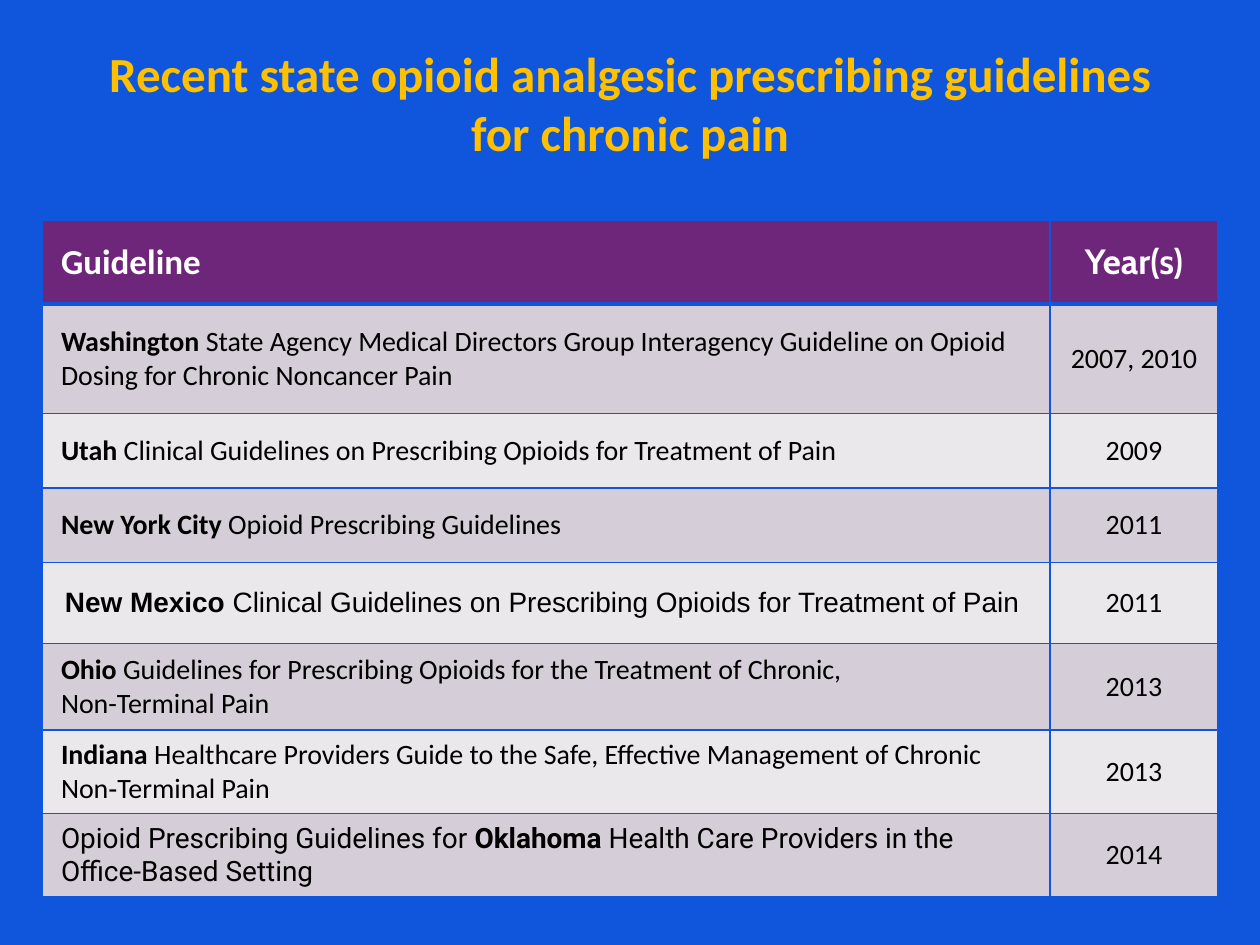
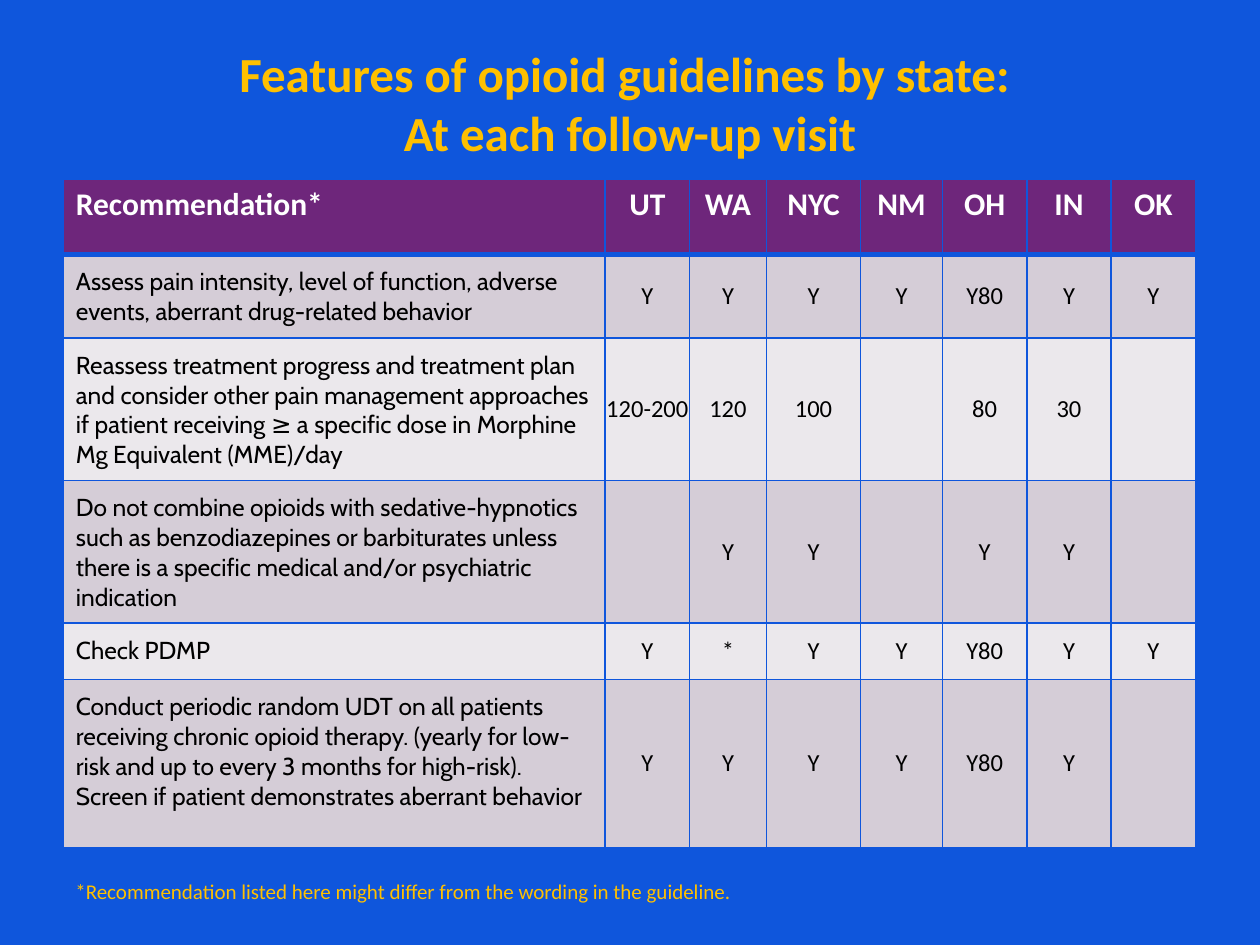
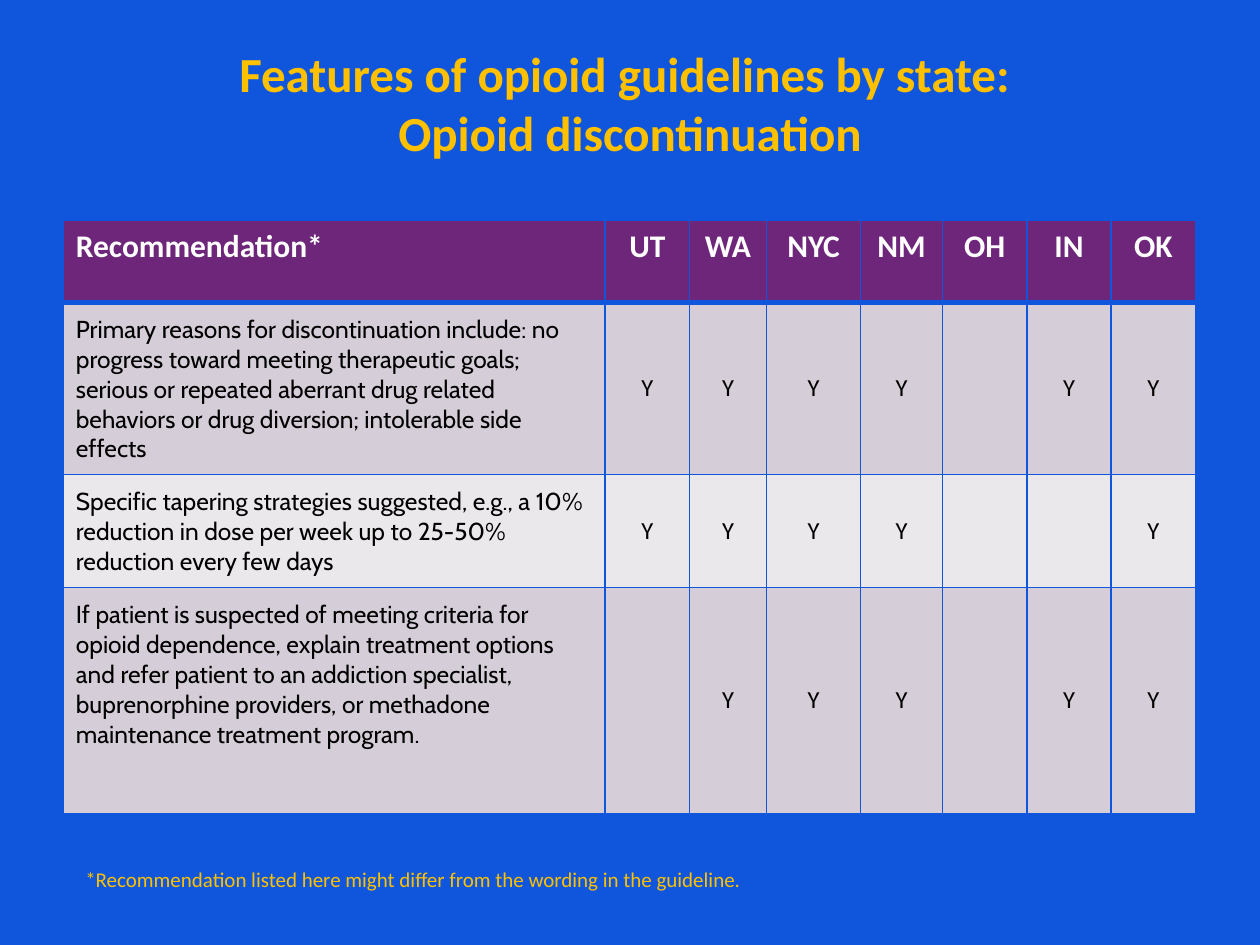
from lxml import etree
from pptx import Presentation
from pptx.dml.color import RGBColor
from pptx.enum.text import MSO_ANCHOR, PP_ALIGN
from pptx.oxml.ns import qn
from pptx.util import Cm, Pt

TOP, MIDDLE = MSO_ANCHOR.TOP, MSO_ANCHOR.MIDDLE
LEFT, CENTER = PP_ALIGN.LEFT, PP_ALIGN.CENTER

HUES = {
    "back": "0F56DC", "title": "FFC000", "head": "6E267B", "white": "FFFFFF",
    "odd": "D5CDD7", "even": "EBE8EC", "text": "000000",
}

# Content: text between bars is bold
GUIDES = [
    ("|Washington| State Agency Medical Directors Group Interagency Guideline on "
     "Opioid Dosing for Chronic Noncancer Pain", "2007, 2010"),
    ("|Utah| Clinical Guidelines on Prescribing Opioids for Treatment of Pain", "2009"),
    ("|New York City| Opioid Prescribing Guidelines", "2011"),
    ("|New Mexico| Clinical Guidelines on Prescribing Opioids for Treatment of Pain",
     "2011"),
    ("|Ohio| Guidelines for Prescribing Opioids for the Treatment of Chronic,\n"
     "Non-Terminal Pain", "2013"),
    ("|Indiana| Healthcare Providers Guide to the Safe, Effective Management of "
     "Chronic Non‐Terminal Pain", "2013"),
    ("Opioid Prescribing Guidelines for |Oklahoma| Health Care Providers in the "
     "Office-Based Setting", "2014"),
]
GUIDE_FONTS = {4: "Arial", 7: "Roboto"}
GUIDE_COLS = [20.32, 3.38]
GUIDE_ROWS = [1.68, 2.21, 1.5, 1.5, 1.63, 1.75, 1.68, 1.68]

STATES = ("Recommendation*", "UT", "WA", "NYC", "NM", "OH", "IN", "OK")
STATE_COLS = [10.92, 1.7, 1.55, 1.9, 1.65, 1.7, 1.7, 1.7]
NOTE = "*Recommendation listed here might differ from the wording in the guideline."

FEATURES = [
    {
        "title": "At each follow-up visit", "top": 3.61, "note": (1.27, 17.58),
        "heights": [1.52, 1.65, 2.79, 2.79, 1.14, 3.38],
        "rows": [
            ("Assess pain intensity, level of function, adverse events, aberrant "
             "drug-related behavior", "Y", "Y", "Y", "Y", "Y80", "Y", "Y"),
            ("Reassess treatment progress and treatment plan and consider other pain "
             "management approaches if patient receiving ≥ a specific dose in Morphine "
             "Mg Equivalent (MME)/day", "120-200", "120", "100", "", "80", "30", ""),
            ("Do not combine opioids with sedative-hypnotics such as benzodiazepines "
             "or barbiturates unless there is a specific medical and/or psychiatric "
             "indication", "", "Y", "Y", "", "Y", "Y", ""),
            ("Check PDMP", "Y", "*", "Y", "Y", "Y80", "Y", "Y"),
            ("Conduct periodic random UDT on all patients receiving chronic opioid "
             "therapy. (yearly for low-risk and up to every 3 months for high-risk). "
             "Screen if patient demonstrates aberrant behavior",
             "Y", "Y", "Y", "Y", "Y80", "Y", ""),
        ],
    },
    {
        "title": "Opioid discontinuation", "top": 4.45, "note": (1.47, 17.35),
        "heights": [1.65, 3.4, 2.24, 4.55],
        "rows": [
            ("Primary reasons for discontinuation include: no progress toward meeting "
             "therapeutic goals; serious or repeated aberrant drug related behaviors or "
             "drug diversion; intolerable side effects",
             "Y", "Y", "Y", "Y", "", "Y", "Y"),
            ("Specific tapering strategies suggested, e.g., a 10% reduction in dose per "
             "week up to 25-50% reduction every few days",
             "Y", "Y", "Y", "Y", "", "", "Y"),
            ("If patient is suspected of meeting criteria for opioid dependence, explain "
             "treatment options and refer patient to an addiction specialist, "
             "buprenorphine providers, or methadone maintenance treatment program.",
             "", "Y", "Y", "Y", "", "Y", "Y"),
        ],
    },
]


def hue(name):
    return RGBColor.from_string(HUES[name])


def write(frame, text, size, color, font="Calibri", bold=False, align=LEFT):
    """Fill a text frame; lines become paragraphs, barred parts bold runs."""
    for i, line in enumerate(text.split("\n")):
        para = frame.add_paragraph() if i else frame.paragraphs[0]
        para.alignment = align
        face = para.font
        face.name, face.size, face.bold = font, Pt(size), bold
        face.color.rgb = hue(color)
        if "|" not in line:
            para.text = line
            continue
        for j, part in enumerate(line.split("|")):
            if part:
                run = para.add_run()
                run.text = part
                run.font.bold = j % 2 == 1


def add_text(slide, box, *args, **style):
    frame = slide.shapes.add_textbox(*map(Cm, box)).text_frame
    frame.word_wrap = True
    write(frame, *args, **style)


def add_slide(deck, title):
    slide = deck.slides.add_slide(deck.slide_layouts[6])
    fill = slide.background.fill
    fill.solid()
    fill.fore_color.rgb = hue("back")
    add_text(slide, (1.27, 0.76, 22.86, 3.18), title, 28, "title",
             bold=True, align=CENTER)
    return slide


def set_edges(cell, head):
    """Draw the cell borders, with a thick rule under the header."""
    props = cell._tc.get_or_add_tcPr()
    for i, side in enumerate(("lnL", "lnR", "lnT", "lnB")):
        wide = Pt(3 if head and side == "lnB" else 1)
        edge = etree.Element(qn("a:" + side), w=str(wide))
        solid = etree.SubElement(edge, qn("a:solidFill"))
        etree.SubElement(solid, qn("a:srgbClr"), val=HUES["back"])
        props.insert(i, edge)


def add_grid(slide, left, top, widths, heights, rows, style):
    """Build a table; style(row, col) gives size, font, anchor and insets."""
    box = (left, top, sum(widths), sum(heights))
    grid = slide.shapes.add_table(len(rows), len(widths), *map(Cm, box)).table
    grid.horz_banding = False
    for col, width in zip(grid.columns, widths):
        col.width = Cm(width)
    for r, (row, height) in enumerate(zip(rows, heights)):
        grid.rows[r].height = Cm(height)
        head = r == 0
        for c, text in enumerate(row):
            cell = grid.cell(r, c)
            size, font, anchor, side, edge = style(r, c)
            cell.vertical_anchor = anchor
            cell.margin_left = cell.margin_right = Cm(side)
            cell.margin_top = cell.margin_bottom = Cm(edge)
            cell.fill.solid()
            cell.fill.fore_color.rgb = hue("head" if head else ("even", "odd")[r % 2])
            set_edges(cell, head)
            write(cell.text_frame, text, size, "white" if head else "text",
                  font, bold=head, align=CENTER if c else LEFT)


def guide_style(r, c):
    if c:
        return (16 if r else 20), ("Calibri" if r else "Cabin"), MIDDLE, 0.25, 0.13
    font = GUIDE_FONTS.get(r, "Calibri")
    return (16 if r else 20), font, MIDDLE, (0.46 if font == "Arial" else 0.38), 0.13


def state_style(r, c):
    if r == 0:
        return 18, "Calibri", TOP, (0 if c else 0.25), 0.13
    if c:
        return 14, "Calibri", MIDDLE, 0, 0
    return 14, "Cabin", TOP, 0.25, 0.25


def main():
    deck = Presentation()
    deck.slide_width, deck.slide_height = Cm(25.4), Cm(19.05)

    # List of guidelines
    slide = add_slide(
        deck, "Recent state opioid analgesic prescribing guidelines for chronic pain")
    add_grid(slide, 0.85, 4.45, GUIDE_COLS, GUIDE_ROWS,
             [("Guideline", "Year(s)")] + GUIDES, guide_style)

    # Features by state
    for part in FEATURES:
        slide = add_slide(
            deck, "Features of opioid guidelines by state: \v" + part["title"])
        add_grid(slide, 1.28, part["top"], STATE_COLS, part["heights"],
                 [STATES] + part["rows"], state_style)
        add_text(slide, (*part["note"], 22, 0.76), NOTE, 12, "title")

    deck.save("out.pptx")


if __name__ == "__main__":
    main()
